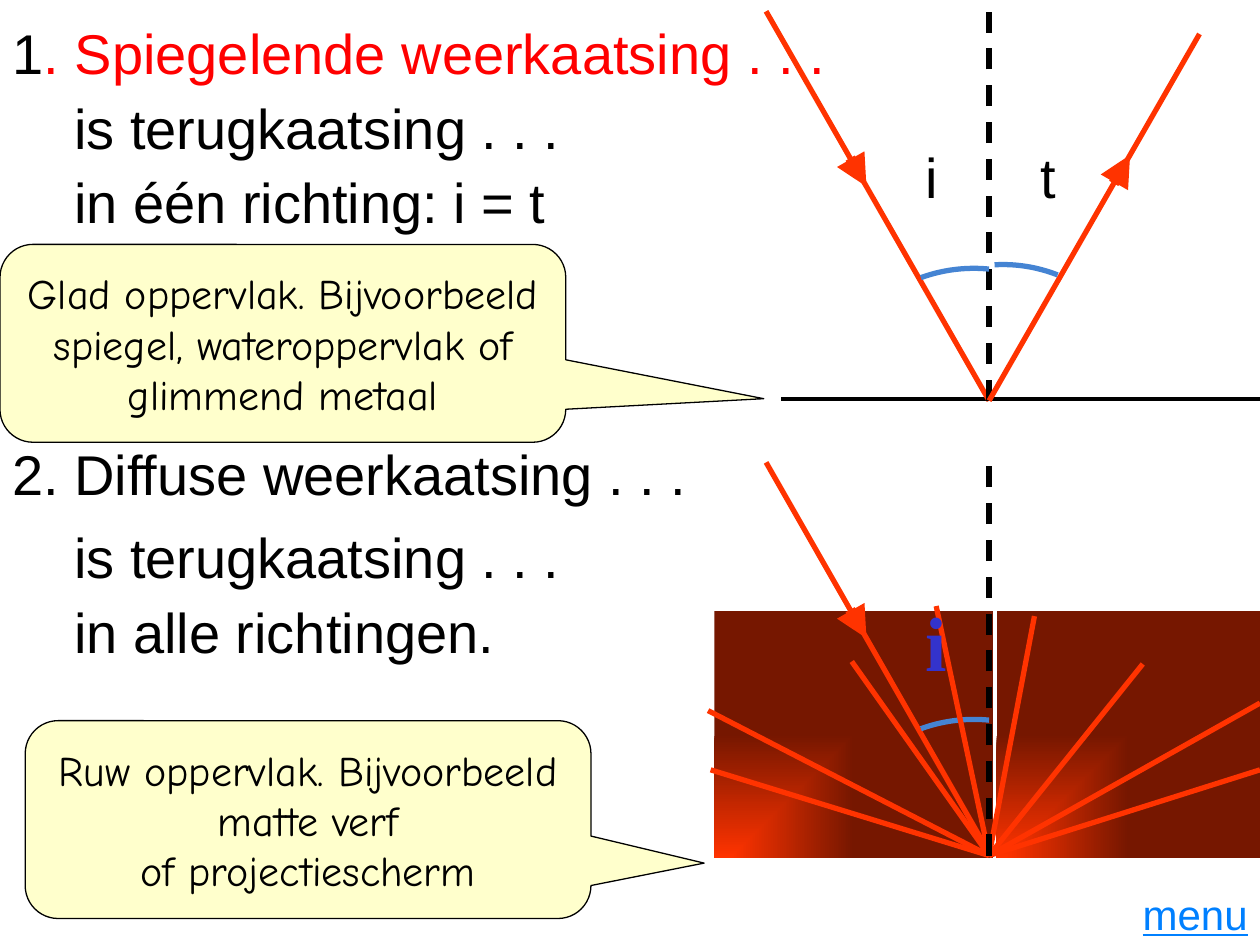
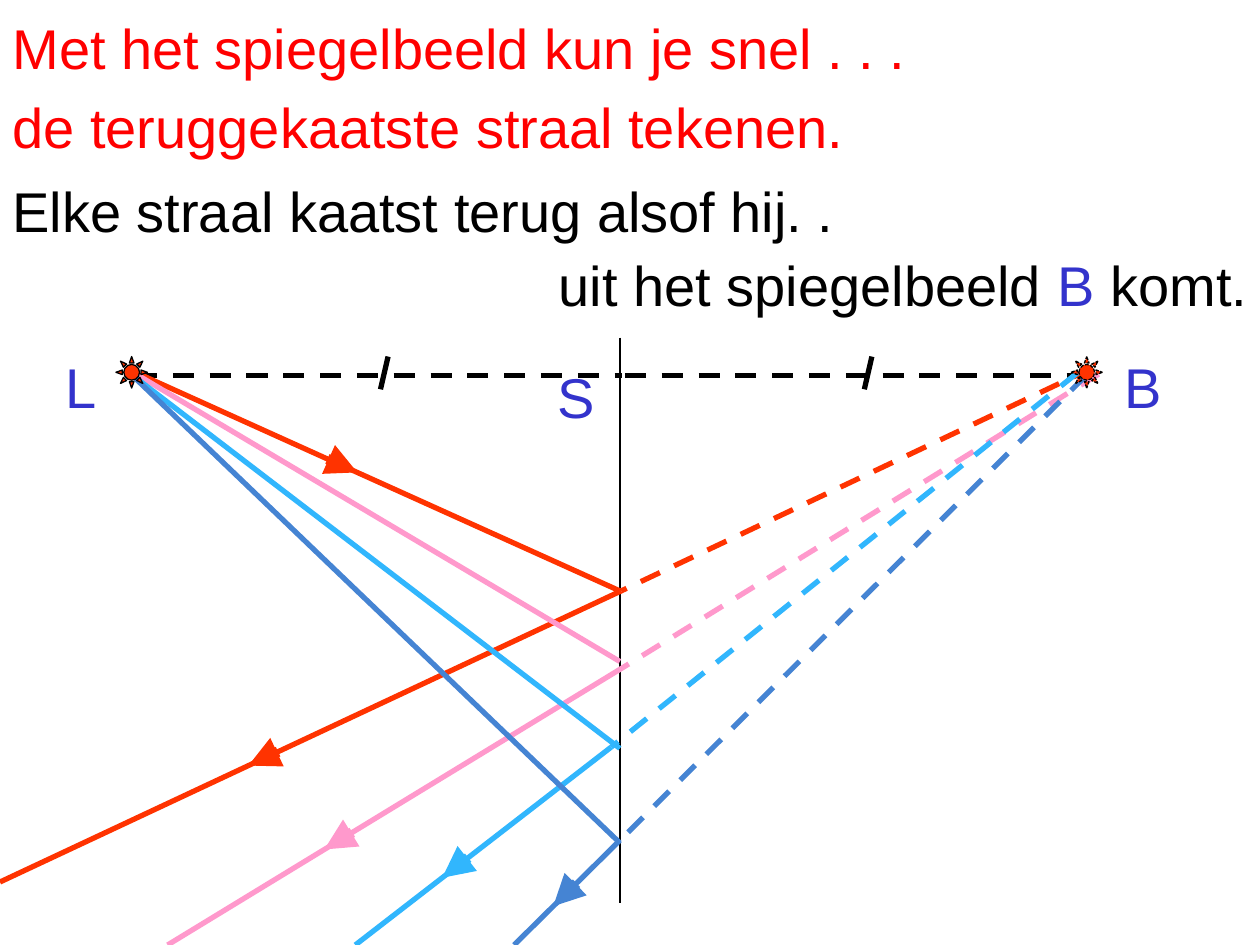
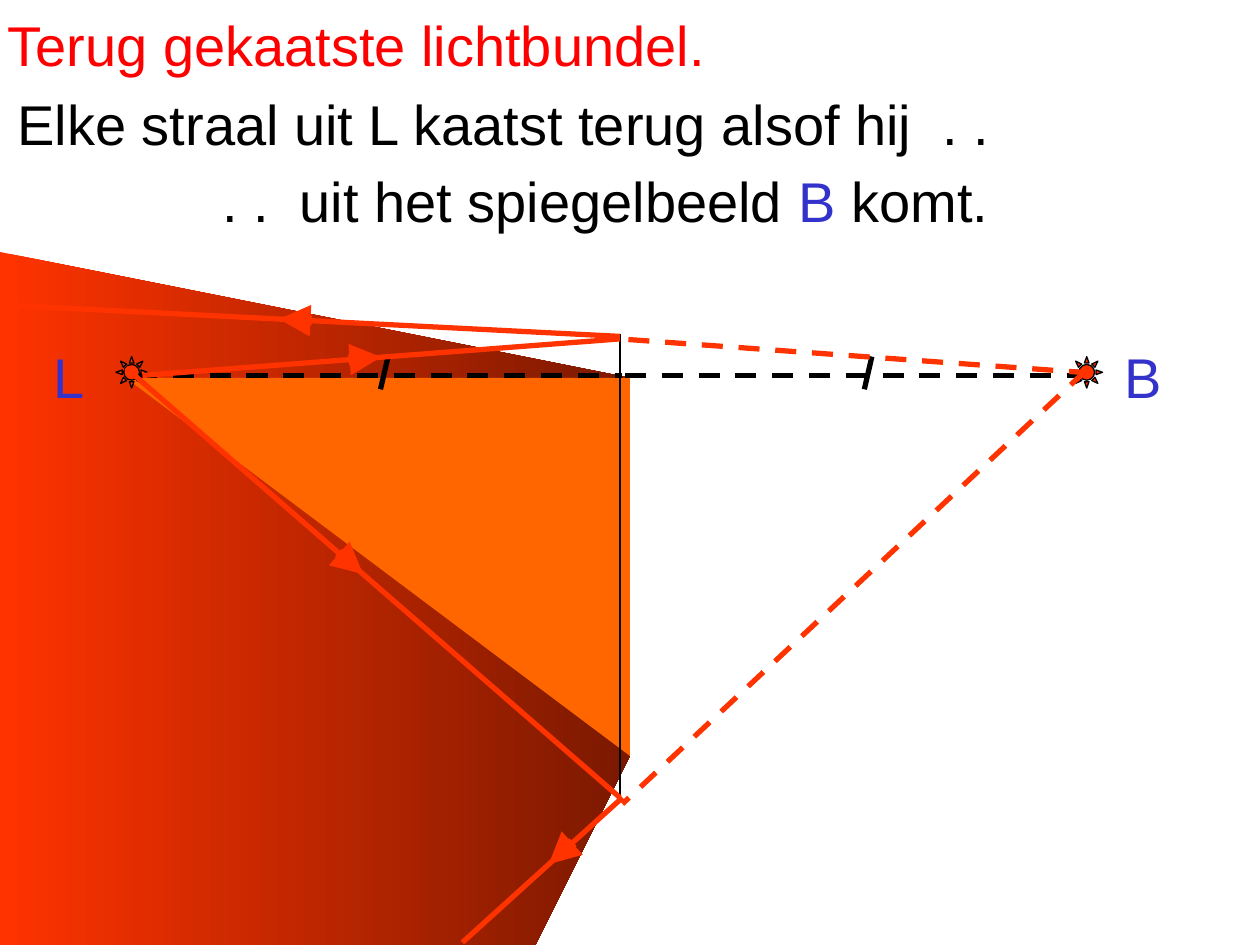
from math import hypot

from lxml import etree
from pptx import Presentation
from pptx.dml.color import RGBColor
from pptx.enum.dml import MSO_LINE
from pptx.enum.shapes import MSO_CONNECTOR, MSO_SHAPE
from pptx.enum.text import MSO_ANCHOR, PP_ALIGN
from pptx.oxml.ns import qn
from pptx.util import Inches, Pt

STRAIGHT = MSO_CONNECTOR.STRAIGHT
RECT, ARC, SUN = MSO_SHAPE.RECTANGLE, MSO_SHAPE.ARC, MSO_SHAPE.SUN
CALLOUT = MSO_SHAPE.ROUNDED_RECTANGULAR_CALLOUT
DASH, DOTS = MSO_LINE.DASH, MSO_LINE.SQUARE_DOT
TOP, MIDDLE = MSO_ANCHOR.TOP, MSO_ANCHOR.MIDDLE
LEFT, CENTER, RIGHT = PP_ALIGN.LEFT, PP_ALIGN.CENTER, PP_ALIGN.RIGHT

COLS, ROWS = 10, 7.5
CELL = Inches(1)
BLACK, RED, RAY, LABEL = "000000", "FF0000", "FF3300", "3333CC"
PINK, SKY, BLUE = "FF99CC", "31B6FD", "4584D3"
LINK, CREAM, ORANGE = "0080FF", "FFFFCC", "FF6600"
DARK, DEEP = "761700", "7B1900"
BODY = {"name": "Arial", "size": Pt(32)}
NOTE = {"name": "Comic Neue", "size": Pt(24)}
HANG = 0.49
MIRROR = 4.92


def rgb(color):
    return RGBColor.from_string(color)


def grid(*values):
    return [int(v * CELL) for v in values]


def place(shape, box):
    for name, value in zip(("left", "top", "width", "height"), grid(*box)):
        setattr(shape, name, value)


def write(shape, paragraphs, font=BODY, anchor=MIDDLE, align=LEFT, indent=0, tab=0):
    tf = shape.text_frame
    tf.word_wrap = True
    tf.vertical_anchor = anchor
    for i, runs in enumerate(paragraphs):
        p = tf.add_paragraph() if i else tf.paragraphs[0]
        p.alignment = align
        pPr = p._p.get_or_add_pPr()
        if indent:
            pPr.set("marL", str(*grid(indent)))
        if tab:
            tabs = etree.SubElement(pPr, qn("a:tabLst"))
            etree.SubElement(tabs, qn("a:tab"), pos=str(*grid(tab)), algn="l")
        for text, color in runs:
            r = p.add_run()
            r.text = text
            for name, value in font.items():
                setattr(r.font, name, value)
            r.font.color.rgb = rgb(color)


def add_text(s, box, *runs, **style):
    write(s.shapes.add_textbox(*grid(*box)), [runs], **style)


def add_label(s, x, y, text, color=LABEL, font=BODY):
    add_text(s, (x, y, 0.5, 0.64), (text, color), font=font, anchor=TOP)


def add_title(s, box, *runs):
    place(s.shapes.title, box)
    write(s.shapes.title, [runs])


def outline(shape, color, width, dash=None):
    shape.line.color.rgb = rgb(color)
    shape.line.width = Pt(width)
    if dash:
        shape.line.dash_style = dash


def add_line(s, start, end, color=BLACK, width=3, dash=None, head=False):
    c = s.shapes.add_connector(STRAIGHT, *grid(*start, *end))
    outline(c, color, width, dash)
    if head:
        etree.SubElement(c.line._get_or_add_ln(), qn("a:tailEnd"), type="triangle")
    etree.SubElement(c._element.spPr, qn("a:effectLst"))


def add_ray(s, start, end, color=RAY, tip=0):
    add_line(s, start, end, color)
    if tip:
        dx, dy = end[0] - start[0], end[1] - start[1]
        back = tip - 0.26 / hypot(dx, dy)
        tail, point = [(start[0] + dx * t, start[1] + dy * t) for t in (back, tip)]
        add_line(s, tail, point, color, 6, head=True)


def add_shape(s, kind, box, fill=None, line=None, dash=None):
    shape = s.shapes.add_shape(kind, *grid(*box))
    finish(shape, fill, line, dash)
    return shape


def finish(shape, fill=None, line=None, dash=None):
    shape.shadow.inherit = False
    if fill:
        shape.fill.solid()
        shape.fill.fore_color.rgb = rgb(fill)
    else:
        shape.fill.background()
    if line:
        outline(shape, line, 0.75, dash)
    else:
        shape.line.fill.background()


def fade(shape, start, end, from_corner=False):
    shape.fill.gradient()
    shape.fill.gradient_angle = 0
    for stop, color in zip(shape.fill.gradient_stops, (start, end)):
        stop.color.rgb = rgb(color)
    if from_corner:
        grad = shape._element.spPr.find(qn("a:gradFill"))
        grad.remove(grad.find(qn("a:lin")))
        corner = etree.SubElement(grad, qn("a:path"), {"path": "rect"})
        etree.SubElement(corner, qn("a:fillToRect"), l="0", t="100000", r="100000", b="0")


def add_outline(s, points, fill):
    fb = s.shapes.build_freeform(*points[0], scale=CELL)
    fb.add_line_segments(points[1:], close=True)
    shape = fb.convert_to_shape()
    finish(shape, fill)
    return shape


def add_arc(s, cx, cy, radius, start, end):
    arc = add_shape(s, ARC, (cx - radius, cy - radius, 2 * radius, 2 * radius))
    for i, degrees in enumerate((start, end)):
        arc.adjustments[i] = degrees * 0.6
    outline(arc, BLUE, 3)


def add_callout(s, x, y, tail, *lines):
    shape = add_shape(s, CALLOUT, (x, y, 4.49, 1.57), CREAM, BLACK)
    for i, value in enumerate(tail):
        shape.adjustments[i] = value
    write(shape, [[(line, BLACK)] for line in lines], font=NOTE, align=CENTER)


def add_sun(s, x, dash=None):
    add_shape(s, SUN, (x, 2.83, 0.25, 0.25), RAY, BLACK, dash)


def add_axis(s):
    for left, right, tick in ((1.08, 4.94, 3.02), (4.96, 8.67, 6.86)):
        add_line(s, (left, 2.98), (right, 2.98), dash=DASH)
        add_line(s, (tick + 0.06, 2.83), (tick, 3.09))


def reflection_slide(s):
    for x, width in ((5.67, 2.21), (7.91, 2.09)):
        fade(add_shape(s, RECT, (x, 4.85, width, 1.96)), RAY, DARK, True)
    add_title(s, (0, 0.12, 10, 0.58), ("1", BLACK), (". Spiegelende weerkaatsing . . .", RED))
    add_text(s, (0, 3.42, 10, 0.67), ("2. Diffuse weerkaatsing . . .", BLACK))
    for y, height, text in (
        (0.72, 0.58, "is terugkaatsing . . ."),
        (1.31, 0.58, "in één richting: i = t"),
        (4.08, 0.67, "is terugkaatsing . . ."),
        (4.67, 0.67, "in alle richtingen."),
    ):
        add_text(s, (0, y, 10, height), (text, BLACK), indent=HANG)
    add_label(s, 8.16, 1.08, "t", BLACK)
    add_label(s, 7.25, 1.08, "i", BLACK)

    add_line(s, (6.2, 3.17), (COLS, 3.17), width=2.25)
    add_ray(s, (6.08, 0.09), (7.85, 3.18), tip=0.45)
    add_line(s, (7.85, 3.18), (7.85, 0), dash=DASH)
    add_ray(s, (7.85, 3.18), (9.52, 0.27), tip=0.67)
    add_arc(s, 7.73, 3.36, 1.23, 250, 275.6)
    add_arc(s, 7.96, 3.29, 1.19, 266.8, 291.4)

    add_ray(s, (6.08, 3.67), (7.85, 6.77), tip=0.45)
    add_arc(s, 7.73, 6.94, 1.23, 250, 275.6)
    for end in ((9.07, 5.27), (5.64, 6.11), (5.62, 5.64), (6.76, 5.25),
                (7.43, 4.81), (8.21, 4.89), (COLS, 5.58), (COLS, 6.11)):
        add_ray(s, (7.85, 6.79), end)
    add_line(s, (7.85, 6.79), (7.85, 3.58), dash=DASH)
    add_label(s, 7.25, 4.67, "i", font={"name": "Times New Roman", "size": Pt(44), "bold": True})

    add_callout(s, 0.2, 5.72, (0.7, 0.22), "Ruw oppervlak. Bijvoorbeeld matte verf",
                "of projectiescherm")
    add_callout(s, 0, 1.94, (0.85, 0.28),
                "Glad oppervlak. Bijvoorbeeld spiegel, wateroppervlak of glimmend metaal")
    add_text(s, (8.86, 7, 1.14, 0.5), ("menu", LINK), anchor=TOP, align=RIGHT,
             font={"name": "Arial", "size": Pt(24), "underline": True})


def mirror_image_slide(s):
    add_axis(s)
    add_title(s, (0, 0, 10, 0.75), ("Met het spiegelbeeld kun je snel . . .", RED))
    add_text(s, (0, 0.71, 9.42, 0.58), ("de teruggekaatste straal tekenen.", RED))
    add_text(s, (0, 1.33, 10, 0.67), ("Elke straal kaatst terug alsof hij. .", BLACK))
    add_text(s, (1.22, 1.92, 8.78, 0.67), ("uit het spiegelbeeld ", BLACK), ("B", LABEL),
             (" komt.", BLACK), align=RIGHT)
    add_line(s, (MIRROR, 2.68), (MIRROR, 7.17), width=0.75)
    add_label(s, 4.33, 2.83, "S")
    for color, lamp, hit, bounce, end, image, tip_in, tip_out in (
        (RAY, (1.13, 2.98), 4.69, (4.93, 4.69), (0, 7), (8.67, 2.92), 0.45, 0.6),
        (PINK, (1.08, 2.97), 5.25, (4.99, 5.27), (1.33, ROWS), (8.72, 2.97), 0, 0.66),
        (SKY, (1.04, 2.97), 5.94, (4.85, 5.93), (2.82, ROWS), (8.55, 2.96), 0, 0.66),
        (BLUE, (1.04, 2.97), 6.69, (4.92, 6.67), (4.08, ROWS), (8.62, 2.98), 0, 0.63),
    ):
        add_ray(s, lamp, (MIRROR, hit), color, tip_in)
        add_ray(s, bounce, end, color, tip_out)
        add_line(s, image, bounce, color, dash=DASH)
    add_sun(s, 0.92)
    add_sun(s, 8.5, DOTS)
    add_label(s, 0.42, 2.75, "L")
    add_label(s, 8.83, 2.75, "B")


def light_beam_slide(s):
    beam = add_outline(s, [(4.89, 2.65), (4.88, 6.41), (3.7, ROWS), (0, ROWS), (0, 2.43)], RAY)
    fade(beam, RAY, DEEP)
    add_outline(s, [(MIRROR, 2.67), (1.05, 2.98), (MIRROR, 6.33)], ORANGE)
    add_line(s, (MIRROR, 2.65), (MIRROR, 6.31), width=0.75)
    add_title(s, (-0.04, 0, 9.42, 0.7), ("Terug gekaatste lichtbundel.", RED))
    add_text(s, (0.04, 0.6, 9.42, 0.75), ("Elke straal uit L kaatst terug alsof hij\t. .", BLACK),
             tab=7.34)
    add_text(s, (1.67, 1.25, 8.25, 0.67), (". .\tuit het spiegelbeeld ", BLACK), ("B", LABEL),
             (" komt.", BLACK), tab=0.61)
    add_ray(s, (MIRROR, 2.67), (0, 2.42), tip=0.55)
    add_axis(s)
    add_sun(s, 8.5)
    add_sun(s, 0.92)
    add_label(s, 8.83, 2.67, "B")
    add_label(s, 0.33, 2.67, "L")
    add_line(s, (8.65, 2.96), (MIRROR, 2.69), RAY, dash=DASH)
    add_line(s, (8.62, 2.94), (4.94, 6.38), RAY, dash=DASH)
    add_ray(s, (1.13, 2.98), (MIRROR, 2.69), tip=0.5)
    add_ray(s, (1, 2.92), (MIRROR, 6.33), tip=0.48)
    add_ray(s, (4.94, 6.33), (3.67, 7.48), tip=0.46)


def main():
    prs = Presentation()
    prs.slide_width, prs.slide_height = grid(COLS, ROWS)
    for build in (reflection_slide, mirror_image_slide, light_beam_slide):
        build(prs.slides.add_slide(prs.slide_layouts[5]))
    prs.save("out.pptx")


if __name__ == "__main__":
    main()
